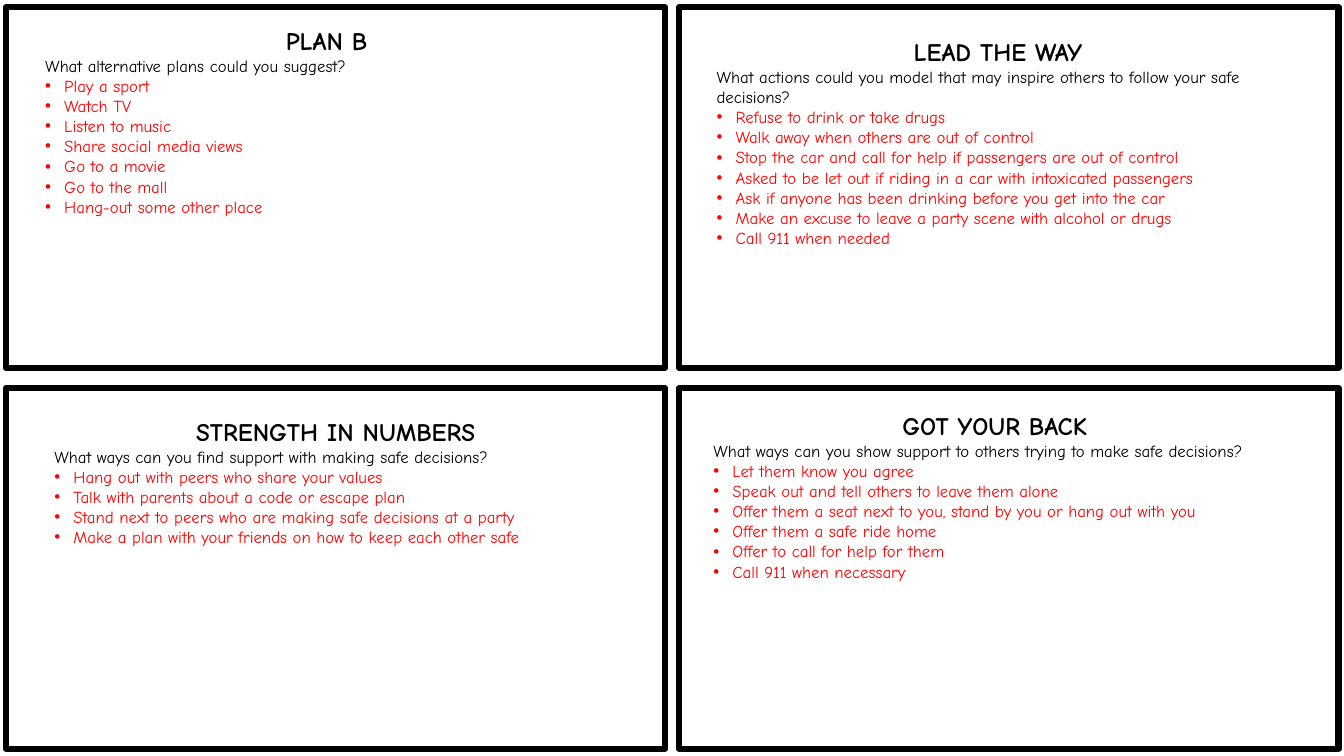
from lxml.etree import SubElement
from pptx import Presentation
from pptx.dml.color import RGBColor
from pptx.enum.shapes import MSO_SHAPE
from pptx.enum.text import MSO_AUTO_SIZE, PP_ALIGN
from pptx.oxml.ns import qn
from pptx.util import Cm, Pt

FONT = "Comic Neue"
BLACK, RED, WHITE = "000000", "FF0000", "FFFFFF"
CARD_LEFT, CARD_TOP = 0.15, 0.18
CARD_WIDTH, CARD_HEIGHT = 16.61, 9.09
COLUMN_STEP, ROW_STEP = 16.97, 9.6
TEXT_WIDTH = 14.68
BULLET_INDENT = Cm(0.48)

TOPICS = [
    {
        "title": "PLAN B",
        "question": "What alternative plans could you suggest?",
        "answers": [
            "Play a sport",
            "Watch TV",
            "Listen to music",
            "Share social media views",
            "Go to a movie",
            "Go to the mall",
            "Hang-out some other place",
        ],
        "place": (0.89, 0.51, 6.15),
    },
    {
        "title": "LEAD THE WAY",
        "question": "What actions could you model that may inspire others "
                    "to follow your safe decisions?",
        "answers": [
            "Refuse to drink or take drugs",
            "Walk away when others are out of control",
            "Stop the car and call for help if passengers are out of control",
            "Asked to be let out if riding in a car with intoxicated passengers",
            "Ask if anyone has been drinking before you get into the car",
            "Make an excuse to leave a party scene with alcohol or drugs",
            "Call 911 when needed",
        ],
        "place": (17.81, 0.79, 7.7),
    },
    {
        "title": "STRENGTH IN NUMBERS",
        "question": "What ways can you find support with making safe decisions?",
        "answers": [
            "Hang out with peers who share your values",
            "Talk with parents about a code or escape plan",
            "Stand next to peers who are making safe decisions at a party",
            "Make a plan with your friends on how to keep each other safe",
        ],
        "place": (1.12, 10.36, 4.62),
    },
    {
        "title": "GOT YOUR BACK",
        "question": "What ways can you show support to others trying "
                    "to make safe decisions?",
        "answers": [
            "Let them know you agree",
            "Speak out and tell others to leave them alone",
            "Offer them a seat next to you, stand by you or hang out with you",
            "Offer them a safe ride home",
            "Offer to call for help for them",
            "Call 911 when necessary",
        ],
        "place": (17.73, 10.21, 6.68),
    },
]


def colour(hex_string):
    return RGBColor.from_string(hex_string)


def add_card(page, column, row):
    card = page.shapes.add_shape(
        MSO_SHAPE.RECTANGLE,
        Cm(CARD_LEFT + column * COLUMN_STEP), Cm(CARD_TOP + row * ROW_STEP),
        Cm(CARD_WIDTH), Cm(CARD_HEIGHT))
    card.shadow.inherit = False
    card.fill.solid()
    card.fill.fore_color.rgb = colour(WHITE)
    card.line.color.rgb = colour(BLACK)
    card.line.width = Pt(4.5)


def write_line(para, text, size=12, ink=BLACK, bold=False):
    para.text = text
    for span in para.runs:
        span.font.name = FONT
        span.font.size = Pt(size)
        span.font.bold = bold
        span.font.color.rgb = colour(ink)


def add_bullet(para):
    properties = para._p.get_or_add_pPr()
    properties.set("marL", str(BULLET_INDENT))
    properties.set("indent", str(-BULLET_INDENT))
    SubElement(properties, qn("a:buFont")).set("typeface", "Arial")
    SubElement(properties, qn("a:buChar")).set("char", "•")


def add_topic(page, title, question, answers, place):
    left, top, height = place
    box = page.shapes.add_textbox(Cm(left), Cm(top), Cm(TEXT_WIDTH), Cm(height))
    frame = box.text_frame
    frame.word_wrap = True
    frame.auto_size = MSO_AUTO_SIZE.SHAPE_TO_FIT_TEXT
    heading = frame.paragraphs[0]
    heading.alignment = PP_ALIGN.CENTER
    write_line(heading, title, size=18, bold=True)
    write_line(frame.add_paragraph(), question)
    for answer in answers:
        para = frame.add_paragraph()
        write_line(para, answer, ink=RED)
        add_bullet(para)


def main():
    deck = Presentation()
    deck.slide_width = Cm(33.87)
    deck.slide_height = Cm(19.05)
    page = deck.slides.add_slide(deck.slide_layouts[6])
    for index, topic in enumerate(TOPICS):
        row, column = divmod(index, 2)
        add_card(page, column, row)
        add_topic(page, **topic)
    deck.save("out.pptx")


if __name__ == "__main__":
    main()
